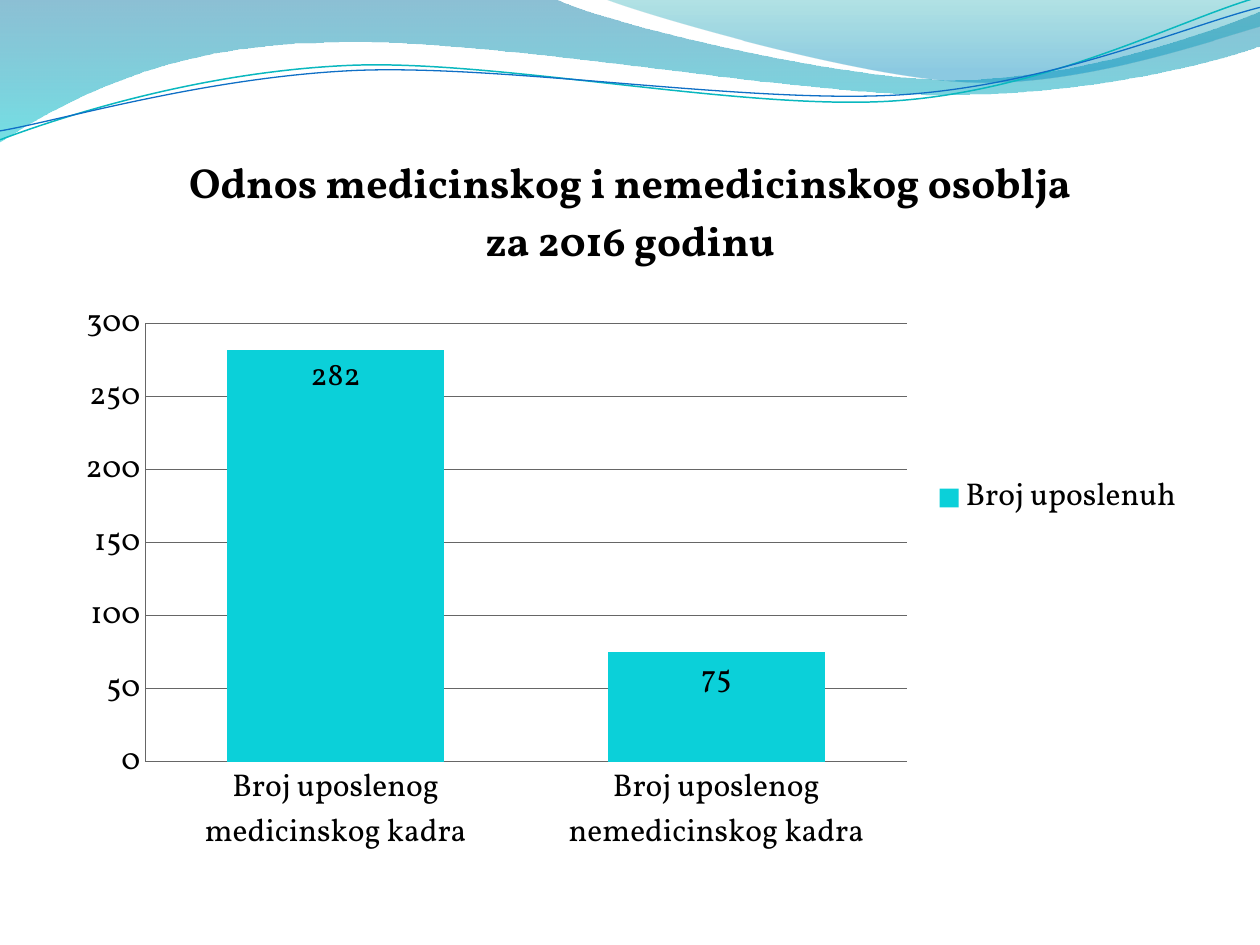
import math

from lxml import etree
from pptx import Presentation
from pptx import util as u
from pptx.chart import data as chart_data
from pptx.dml import color as dml
from pptx.enum import chart as ch
from pptx.oxml import ns

# Each outline is a start point followed by segments, in centimetres:
# two numbers make a straight line, six make a Bezier curve.
LEFT_WAVE = [
    (0, -0.03),
    (11.18, -0.03),
    (12.09, 0.43, 16.87, 1.6, 19.25, 1.6),
    (21.67, 1.6, 24.33, 0.66, 25.4, 0.23),
    (25.43, 0.91),
    (24.97, 1.12, 22.1, 1.93, 18.95, 1.91),
    (15.8, 1.91, 9.7, 0.71, 6.53, 0.86),
    (3.28, 0.89, 1.17, 2.11, -0.03, 2.87),
]
RIGHT_WAVE = [
    (12.17, -0.03),
    (12.93, 0.28, 17.32, 1.57, 19.53, 1.65),
    (21.74, 1.75, 24.41, 0.81, 25.4, 0.53),
    (25.4, 0),
]
TEAL_LINE = [
    (0, 2.82),
    (1.22, 2.36, 4.01, 1.45, 7.04, 1.32),
    (10.03, 1.19, 15.06, 2.26, 18.11, 2.03),
    (21.16, 1.8, 23.83, 0.38, 25.35, -0.05),
]
BLUE_LINE = [
    (0, 2.64),
    (1.19, 2.44, 4.17, 1.55, 7.19, 1.42),
    (10.24, 1.3, 15.16, 2.11, 18.21, 1.91),
    (21.23, 1.7, 23.9, 0.53, 25.4, 0.15),
]
LINE_TILT = -2.7
LINE_CENTER = (12.7, 1.47)


def rgb(value):
    return dml.RGBColor.from_string(value)


def turn(point, degrees, center):
    """Turn a point clockwise about a center."""
    angle = math.radians(degrees)
    x, y = point[0] - center[0], point[1] - center[1]
    return (center[0] + x * math.cos(angle) - y * math.sin(angle),
            center[1] + x * math.sin(angle) + y * math.cos(angle))


class SlideBuilder:
    font = "Vollkorn"
    text_color = "000000"
    bar_color = "0BD0D9"
    axis_color = "666666"

    def __init__(self, slide):
        self.slide = slide

    def outline(self, shapes, outline, closed, tilt=0):
        """Build a freeform through all points, then bend its curved segments."""
        points = [segment[i:i + 2] for segment in outline for i in range(0, len(segment), 2)]
        points = [tuple(map(u.Cm, turn(point, -tilt, LINE_CENTER))) for point in points]
        builder = shapes.build_freeform(*points[0])
        builder.add_line_segments(points[1:], close=closed)
        shape = builder.convert_to_shape()
        shape.rotation = tilt
        shape.shadow.inherit = False
        straight = iter(list(shape.element.iter(ns.qn("a:lnTo"))))
        for segment in outline[1:]:
            parts = [next(straight) for _ in range(len(segment) // 2)]
            if len(parts) == 3:
                curve = etree.Element(ns.qn("a:cubicBezTo"))
                parts[0].addprevious(curve)
                for part in parts:
                    curve.append(part[0])
                    part.getparent().remove(part)
        return shape

    def wave(self, outline, stops):
        """Draw a filled wave; stops are (position, colour, opacity percent)."""
        shape = self.outline(self.slide.shapes, outline, True)
        shape.line.fill.background()
        shape.fill.gradient()
        shape.fill.gradient_angle = 270
        for stop, (position, value, opacity) in zip(shape.fill.gradient_stops, stops):
            stop.position = position
            stop.color.rgb = rgb(value)
        colors = shape.element.spPr.iter(ns.qn("a:srgbClr"))
        for color, (position, value, opacity) in zip(colors, stops):
            etree.SubElement(color, ns.qn("a:alpha"), val=str(opacity * 1000))

    def line_pair(self, lines):
        group = self.slide.shapes.add_group_shape()
        for outline, color, width in lines:
            shape = self.outline(group.shapes, outline, False, LINE_TILT)
            shape.fill.background()
            shape.line.color.rgb = rgb(color)
            shape.line.width = u.Pt(width)

    def format_font(self, font, size, bold=False):
        font.name = self.font
        font.size = u.Pt(size)
        font.bold = bold
        font.color.rgb = rgb(self.text_color)

    def format_line(self, line):
        line.color.rgb = rgb(self.axis_color)
        line.width = u.Pt(0.75)

    def place_plot(self, chart, **box):
        """Fix the inner plot area, in fractions of the chart."""
        area = chart.element.find(".//" + ns.qn("c:plotArea"))
        layout = area.find(ns.qn("c:layout"))
        if layout is None:
            layout = etree.Element(ns.qn("c:layout"))
            area.insert(0, layout)
        manual = etree.SubElement(layout, ns.qn("c:manualLayout"))
        settings = {"layoutTarget": "inner", "xMode": "edge", "yMode": "edge", **box}
        for name, value in settings.items():
            etree.SubElement(manual, ns.qn("c:" + name), val=str(value))

    def column_chart(self, title, categories, series_name, values, box, plot_box):
        data = chart_data.CategoryChartData()
        data.categories = categories
        data.add_series(series_name, values)
        chart = self.slide.shapes.add_chart(
            ch.XL_CHART_TYPE.COLUMN_CLUSTERED, *map(u.Cm, box), data).chart
        self.format_font(chart.font, 18)

        chart.has_title = True
        run = chart.chart_title.text_frame.paragraphs[0].add_run()
        run.text = title
        self.format_font(run.font, 24, bold=True)
        chart.chart_title.include_in_layout = False

        chart.has_legend = True
        chart.legend.position = ch.XL_LEGEND_POSITION.RIGHT
        chart.legend.include_in_layout = False

        for axis in (chart.category_axis, chart.value_axis):
            axis.major_tick_mark = ch.XL_TICK_MARK.NONE
            axis.minor_tick_mark = ch.XL_TICK_MARK.NONE
            self.format_line(axis.format.line)
        value_axis = chart.value_axis
        value_axis.minimum_scale, value_axis.maximum_scale = 0, 300
        value_axis.major_unit = 50
        value_axis.has_major_gridlines = True
        self.format_line(value_axis.major_gridlines.format.line)

        plot = chart.plots[0]
        plot.gap_width, plot.overlap = 75, 40
        plot.vary_by_categories = False
        series = plot.series[0]
        series.format.fill.solid()
        series.format.fill.fore_color.rgb = rgb(self.bar_color)
        labels = series.data_labels
        labels.show_value = True
        labels.position = ch.XL_LABEL_POSITION.INSIDE_END
        self.format_font(labels.font, 18)
        x, y, width, height = plot_box
        self.place_plot(chart, x=x / box[2], y=y / box[3], w=width / box[2], h=height / box[3])


def main():
    presentation = Presentation()
    presentation.slide_width = u.Cm(25.4)
    presentation.slide_height = u.Cm(19.05)
    blank_layout = presentation.slide_layouts[6]
    builder = SlideBuilder(presentation.slides.add_slide(blank_layout))

    builder.wave(LEFT_WAVE, [(0, "0074A1", 45), (1, "00C6CF", 55)])
    builder.wave(RIGHT_WAVE, [(0, "00A1A9", 30), (0.8, "008BBF", 45)])
    builder.line_pair([(TEAL_LINE, "0AB8BF", 0.85), (BLUE_LINE, "0F6FC6", 0.75)])
    builder.column_chart(
        "Odnos medicinskog i nemedicinskog osoblja za 2016 godinu",
        ["Broj uposlenog medicinskog kadra", "Broj uposlenog nemedicinskog kadra"],
        "Broj uposlenuh", [282, 75],
        box=(1.27, 2.52, 22.86, 15.04), plot_box=(1.66, 4.01, 15.35, 8.83))

    presentation.save("out.pptx")


if __name__ == "__main__":
    main()
